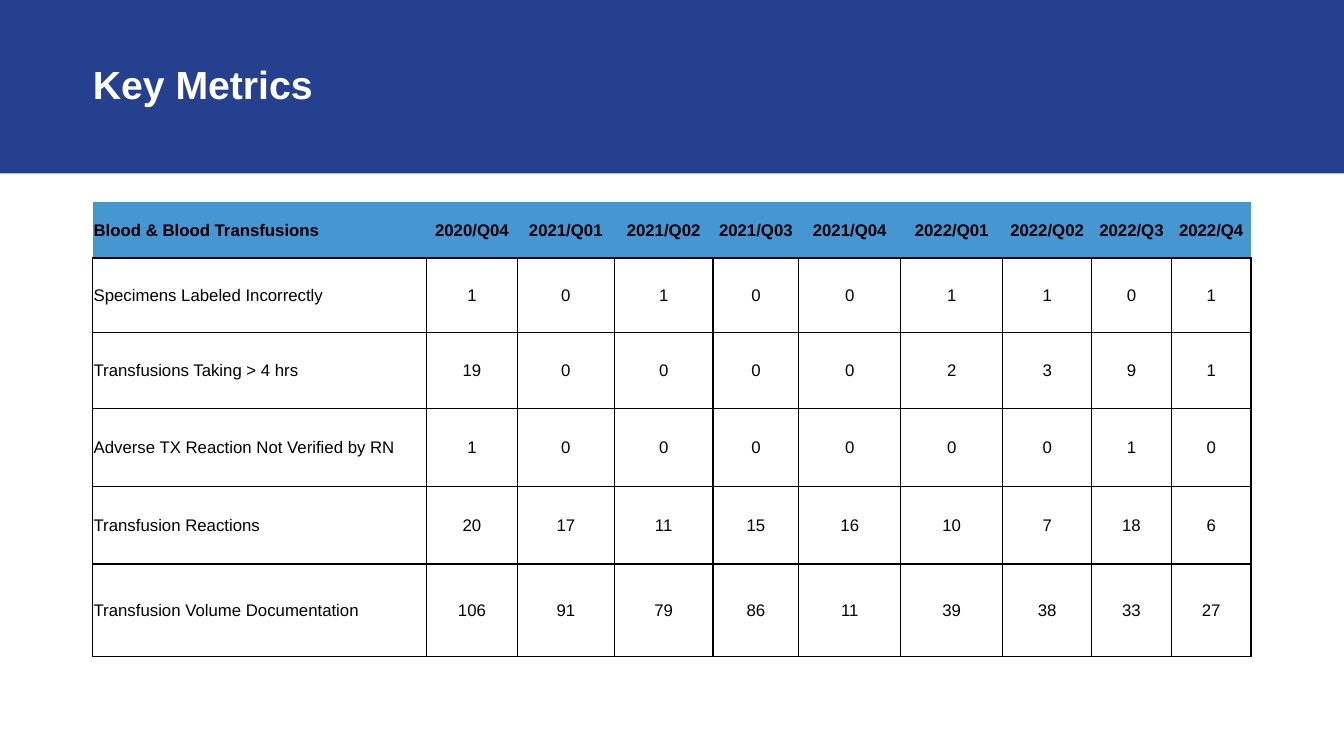
from dataclasses import dataclass

from lxml.etree import SubElement
from pptx import Presentation
from pptx.dml.color import RGBColor
from pptx.enum.shapes import MSO_SHAPE
from pptx.enum.text import MSO_ANCHOR, MSO_AUTO_SIZE, PP_ALIGN
from pptx.oxml.ns import qn
from pptx.slide import Slide
from pptx.table import Table, _Cell
from pptx.text.text import _Paragraph
from pptx.util import Cm, Pt

COLORS = {
    "band": "25408F",
    "header": "4696D2",
    "body": "FFFFFF",
    "ink": "000000",
    "title": "FFFFFF",
}
FONT = "Arial"
SLIDE_WIDTH, SLIDE_HEIGHT = Cm(33.87), Cm(19.05)
LEFT_MARGIN = Cm(2.34)
COLUMN_WIDTHS = [8.41, 2.29, 2.44, 2.49, 2.16, 2.57, 2.57, 2.24, 2.01, 2.01]
QUARTERS = ["2020/Q04", "2021/Q01", "2021/Q02", "2021/Q03", "2021/Q04",
            "2022/Q01", "2022/Q02", "2022/Q3", "2022/Q4"]


@dataclass
class MetricRow:
    label: str
    entries: list
    height: float
    fill: str = "body"
    bold: bool = False
    borders: str = "LRTB"


METRICS = [
    MetricRow("Blood & Blood Transfusions", QUARTERS, 1.42, "header", True, "B"),
    MetricRow("Specimens Labeled Incorrectly", [1, 0, 1, 0, 0, 1, 1, 0, 1], 1.88),
    MetricRow("Transfusions Taking > 4 hrs", [19, 0, 0, 0, 0, 2, 3, 9, 1], 1.91),
    MetricRow("Adverse TX Reaction Not Verified by RN", [1, 0, 0, 0, 0, 0, 0, 1, 0], 1.96),
    MetricRow("Transfusion Reactions", [20, 17, 11, 15, 16, 10, 7, 18, 6], 1.96),
    MetricRow("Transfusion Volume Documentation", [106, 91, 79, 86, 11, 39, 38, 33, 27], 2.34),
]


def color(name: str) -> RGBColor:
    return RGBColor.from_string(COLORS[name])


def add_run(paragraph: _Paragraph, text: str, size: int, ink: str, bold: bool) -> None:
    run = paragraph.add_run()
    run.text = text
    run.font.name = FONT
    run.font.size = Pt(size)
    run.font.bold = bold
    run.font.color.rgb = color(ink)


def set_borders(cell: _Cell, sides: str) -> None:
    """Draw the listed sides and hide the others."""
    properties = cell._tc.get_or_add_tcPr()
    for position, side in enumerate("LRTB"):
        line = SubElement(properties, qn(f"a:ln{side}"), w=str(Pt(1)))
        if side in sides:
            fill = SubElement(line, qn("a:solidFill"))
            SubElement(fill, qn("a:srgbClr"), val=COLORS["ink"])
        else:
            SubElement(line, qn("a:noFill"))
        properties.insert(position, line)


def fill_cell(cell: _Cell, text: str, metric: MetricRow, align: PP_ALIGN) -> None:
    cell.margin_left = cell.margin_right = cell.margin_top = Cm(0.02)
    cell.margin_bottom = 0
    cell.vertical_anchor = MSO_ANCHOR.MIDDLE
    cell.fill.solid()
    cell.fill.fore_color.rgb = color(metric.fill)
    set_borders(cell, metric.borders)
    paragraph = cell.text_frame.paragraphs[0]
    paragraph.alignment = align
    add_run(paragraph, text, 12, "ink", metric.bold)


def add_heading(slide: Slide) -> None:
    # Band behind the title
    band = slide.shapes.add_shape(MSO_SHAPE.RECTANGLE, 0, 0, SLIDE_WIDTH, Cm(4.37))
    band.shadow.inherit = False
    band.fill.solid()
    band.fill.fore_color.rgb = color("band")
    band.line.fill.background()

    # Title
    title = slide.shapes.title
    title.element.addprevious(band.element)
    title.left, title.top = LEFT_MARGIN, Cm(0.56)
    title.width, title.height = Cm(28.73), Cm(3.25)
    frame = title.text_frame
    frame.auto_size = MSO_AUTO_SIZE.NONE
    frame.word_wrap = True
    frame.vertical_anchor = MSO_ANCHOR.MIDDLE
    frame.margin_left = frame.margin_right = frame.margin_top = frame.margin_bottom = 0
    heading = frame.paragraphs[0]
    heading.alignment = PP_ALIGN.LEFT
    heading.line_spacing = 0.9
    add_run(heading, "Key Metrics", 28, "title", True)


def add_metrics(slide: Slide) -> Table:
    total_height = sum(metric.height for metric in METRICS)
    table = slide.shapes.add_table(
        len(METRICS), len(COLUMN_WIDTHS), LEFT_MARGIN, Cm(5.08),
        Cm(sum(COLUMN_WIDTHS)), Cm(total_height)).table
    table.horz_banding = False
    for column, width in zip(table.columns, COLUMN_WIDTHS):
        column.width = Cm(width)
    for row, metric in zip(table.rows, METRICS):
        row.height = Cm(metric.height)
        for index, entry in enumerate([metric.label, *metric.entries]):
            align = PP_ALIGN.CENTER if index else PP_ALIGN.LEFT
            fill_cell(row.cells[index], str(entry), metric, align)
    return table


def main() -> None:
    presentation = Presentation()
    presentation.slide_width = SLIDE_WIDTH
    presentation.slide_height = SLIDE_HEIGHT
    slide = presentation.slides.add_slide(presentation.slide_layouts.get_by_name("Title Only"))
    add_heading(slide)
    add_metrics(slide)
    presentation.save("out.pptx")


if __name__ == "__main__":
    main()
